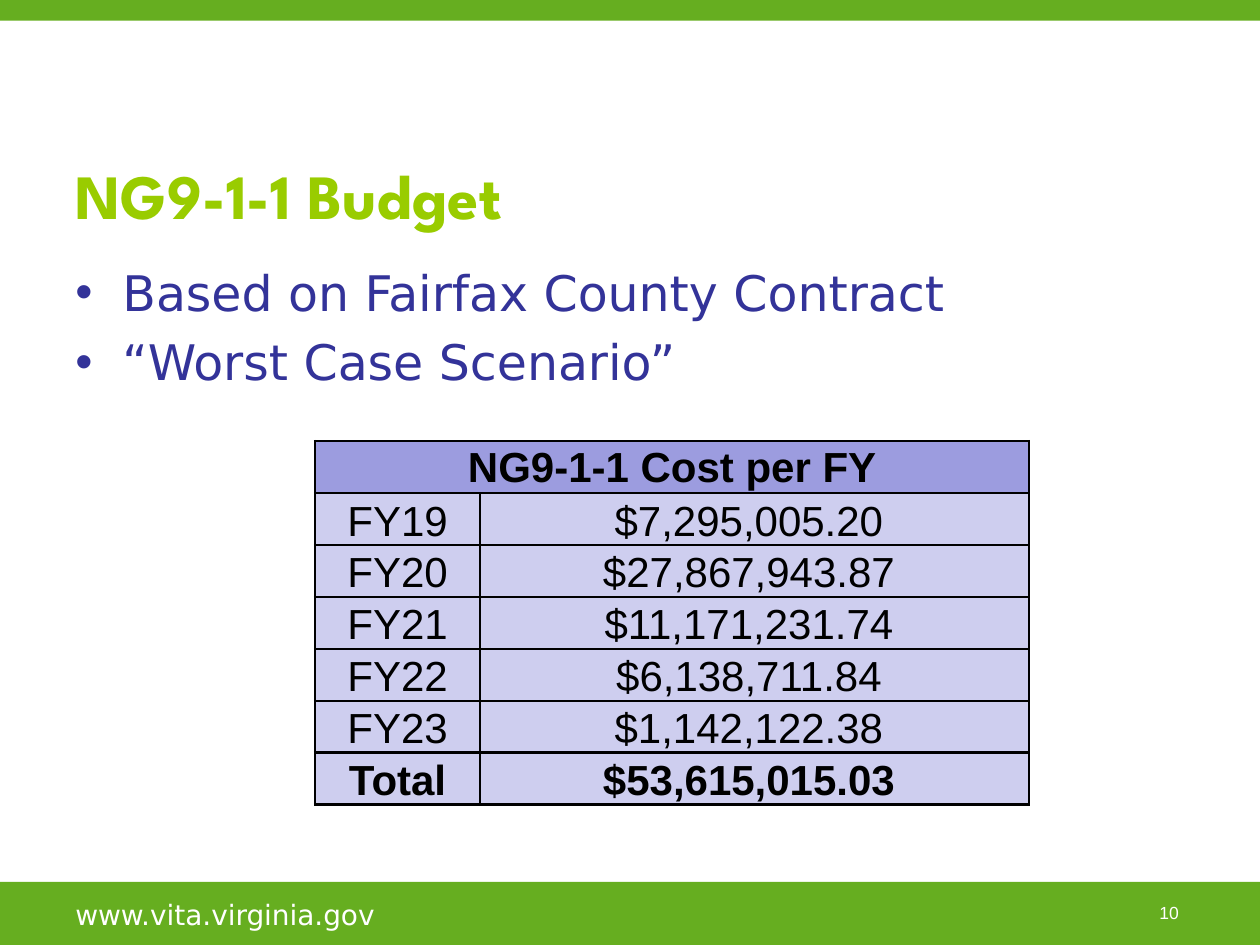
import pptx
import pptx.util
import pptx.dml.color
import pptx.enum.shapes
import pptx.enum.text
import pptx.oxml
import pptx.oxml.ns

Cm, Pt = pptx.util.Cm, pptx.util.Pt
RGBColor = pptx.dml.color.RGBColor
ANCHOR = pptx.enum.text.MSO_ANCHOR
ALIGN = pptx.enum.text.PP_ALIGN

# Content
TITLE = "NG9-1-1 Budget"
POINTS = ["Based on Fairfax County Contract", "“Worst Case Scenario”"]
WEBSITE = "www.vita.virginia.gov"
PAGE_NUMBER = "10"
COST_HEADING = "NG9-1-1 Cost per FY"
COSTS = [
    ("FY19", "$7,295,005.20 "),
    ("FY20", "$27,867,943.87 "),
    ("FY21", "$11,171,231.74 "),
    ("FY22", "$6,138,711.84 "),
    ("FY23", "$1,142,122.38 "),
    ("Total", "$53,615,015.03 "),
]

# Colours and formats
GREEN = RGBColor(0x66, 0xAE, 0x20)
LIME = RGBColor(0x99, 0xCC, 0x00)
NAVY = RGBColor(0x33, 0x33, 0x99)
WHITE = RGBColor(0xFF, 0xFF, 0xFF)
BLACK = RGBColor(0x00, 0x00, 0x00)
HEADING_FILL = RGBColor(0x9C, 0x9C, 0xDF)
ROW_FILL = RGBColor(0xCE, 0xCE, 0xEF)

TITLE_FONT = {"name": "League Spartan", "size": Pt(36), "bold": True}
POINT_FONT = {"name": "DejaVu Sans", "size": Pt(28)}
WEBSITE_FONT = {"name": "DejaVu Sans", "size": Pt(16)}
NUMBER_FONT = {"name": "Arial", "size": Pt(10)}
COST_FONT = {"name": "Arial", "size": Pt(24)}
CELL_FORMAT = {"margin_left": Cm(0.03), "margin_right": Cm(0.03),
               "margin_top": Cm(0.03), "margin_bottom": 0}

# Layout in cm
SLIDE_W, SLIDE_H = 25.4, 19.05
TOP_BAR_H, FOOTER_H = 0.42, 1.27
LEFT, BODY_W = 1.27, 22.86
COST_COLUMNS = [3.33, 11.07]
COST_ROW_H = 0.97
BULLET_INDENT = 0.95


def style(font, values, colour):
    for key, value in values.items():
        setattr(font, key, value)
    font.color.rgb = colour


def add_text(place, lines, values, colour, anchor=ANCHOR.TOP,
             align=ALIGN.LEFT, wrap=True, bullet=False):
    frame = slide.shapes.add_textbox(*map(Cm, place)).text_frame
    frame.word_wrap = wrap
    frame.vertical_anchor = anchor
    frame.text = "\n".join(lines)
    for index, paragraph in enumerate(frame.paragraphs):
        paragraph.alignment = align
        if index:
            paragraph.space_before = Pt(6)
        if bullet:
            add_bullet(paragraph)
        style(paragraph.font, values, colour)
    return frame


def add_bullet(paragraph):
    properties = paragraph._p.get_or_add_pPr()
    properties.set("marL", str(Cm(BULLET_INDENT)))
    properties.set("indent", str(-Cm(BULLET_INDENT)))
    namespace = pptx.oxml.ns.nsdecls("a")
    for element in ('buFont %s typeface="Arial"', 'buChar %s char="•"'):
        properties.append(pptx.oxml.parse_xml(f"<a:{element % namespace}/>"))


def add_borders(cell):
    properties = cell._tc.get_or_add_tcPr()
    for index, side in enumerate("LRTB"):
        properties.insert(index, pptx.oxml.parse_xml(
            f'<a:ln{side} {pptx.oxml.ns.nsdecls("a")} w="{Pt(1.5)}">'
            f'<a:solidFill><a:srgbClr val="{BLACK}"/></a:solidFill></a:ln{side}>'))


def fill_cell(cell, text, fill, anchor, bold):
    cell.text = text
    cell.vertical_anchor = anchor
    for key, value in CELL_FORMAT.items():
        setattr(cell, key, value)
    paragraph = cell.text_frame.paragraphs[0]
    paragraph.alignment = ALIGN.CENTER
    style(paragraph.font, {**COST_FONT, "bold": bold}, BLACK)
    cell.fill.solid()
    cell.fill.fore_color.rgb = fill
    add_borders(cell)


deck = pptx.Presentation()
deck.slide_width, deck.slide_height = Cm(SLIDE_W), Cm(SLIDE_H)
slide = deck.slides.add_slide(deck.slide_layouts[6])

# Green bars at the foot and the top
for top, height in [(SLIDE_H - FOOTER_H, FOOTER_H), (0, TOP_BAR_H)]:
    bar = slide.shapes.add_shape(pptx.enum.shapes.MSO_SHAPE.RECTANGLE,
                                 0, Cm(top), Cm(SLIDE_W), Cm(height))
    bar.shadow.inherit = False
    bar.fill.solid()
    bar.fill.fore_color.rgb = GREEN
    bar.line.fill.background()

# Page number, title, points and website
number = add_text((23.29, 18.16, 0.56, 0.48), [PAGE_NUMBER], NUMBER_FONT, WHITE,
                  ANCHOR.MIDDLE, ALIGN.CENTER, wrap=False)
for side in ("left", "right", "top", "bottom"):
    setattr(number, f"margin_{side}", 0)
add_text((LEFT, 2.74, BODY_W, 2.34), [TITLE], TITLE_FONT, LIME, ANCHOR.MIDDLE)
add_text((LEFT, 5.17, BODY_W, 3.1), POINTS, POINT_FONT, NAVY, bullet=True)
add_text((LEFT, 17.96, 6.78, 0.89), [WEBSITE], WEBSITE_FONT, WHITE)

# Cost table
row_count = len(COSTS) + 1
costs = slide.shapes.add_table(
    row_count, len(COST_COLUMNS), Cm(6.35), Cm(8.89),
    Cm(sum(COST_COLUMNS)), Cm(COST_ROW_H * row_count)).table
for column, width in zip(costs.columns, COST_COLUMNS):
    column.width = Cm(width)
for row in costs.rows:
    row.height = Cm(COST_ROW_H)

costs.cell(0, 0).merge(costs.cell(0, 1))
fill_cell(costs.cell(0, 0), COST_HEADING, HEADING_FILL, ANCHOR.MIDDLE, True)
add_borders(costs.cell(0, 1))
for r, entry in enumerate(COSTS, start=1):
    for c, text in enumerate(entry):
        fill_cell(costs.cell(r, c), text, ROW_FILL, ANCHOR.BOTTOM,
                  entry[0] == "Total")

deck.save("out.pptx")
